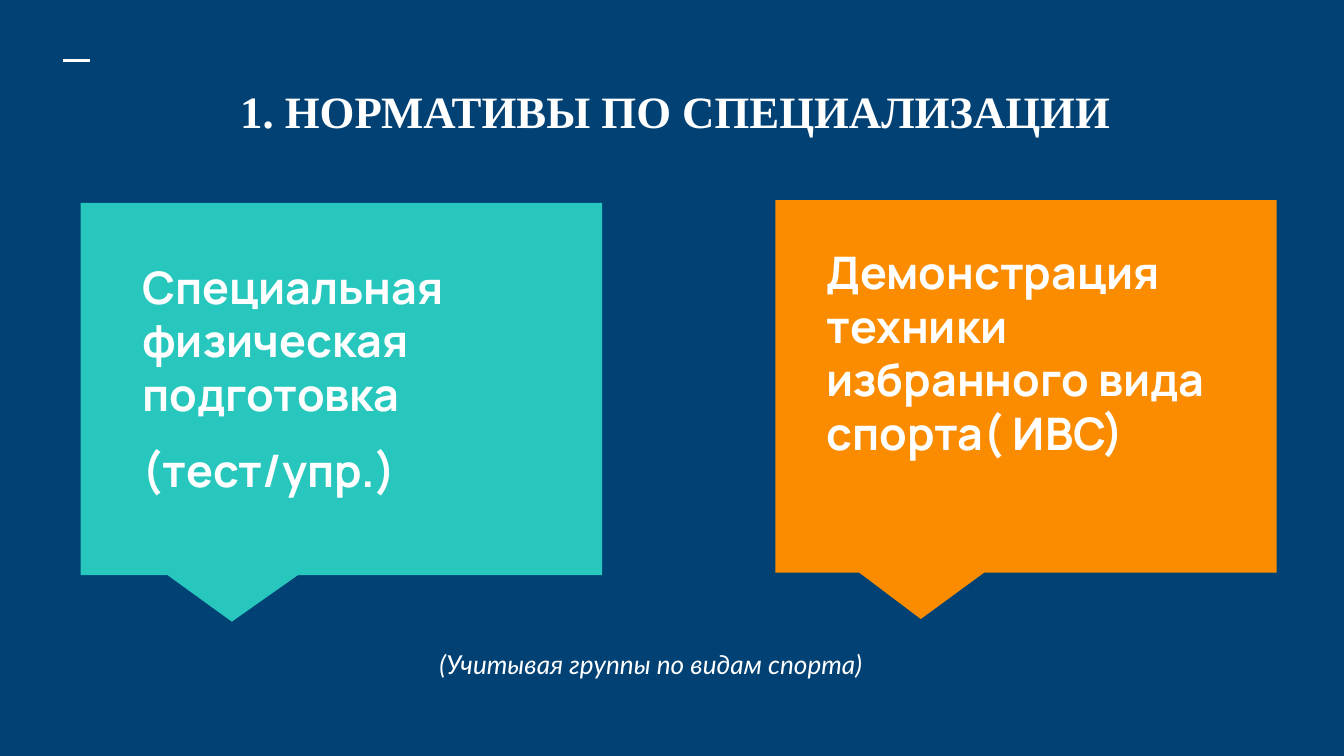
from pptx import Presentation
from pptx.dml.color import RGBColor
from pptx.enum import shapes, text
from pptx.oxml.ns import qn
from pptx.util import Inches, Pt
from lxml import etree

WHITE = "FFFFFF"
TOPIC_FONT = {"name": "Manrope", "size": Pt(24), "bold": True}
CALLOUTS = [
    {"box": (0.6, 1.51, 3.88, 2.77), "fill": "27C7BD", "text_box": (0.36, 0.32, 3.17, 2.29),
     "lines": ["Специальная физическая подготовка", "(тест/упр.)"]},
    {"box": (5.77, 1.49, 3.73, 2.77), "fill": "FB8C00", "text_box": (0.28, 0.23, 3.18, 2.49),
     "lines": ["Демонстрация техники избранного вида спорта( ИВС)"]},
]


def color(hex_code):
    return RGBColor.from_string(hex_code)


def add_text(slide, box, lines, font, align=text.PP_ALIGN.LEFT, anchor=text.MSO_ANCHOR.TOP):
    frame = slide.shapes.add_textbox(*map(Inches, box)).text_frame
    frame_format = {"word_wrap": True, "vertical_anchor": anchor}
    frame_format.update({f"margin_{side}": Inches(0.1) for side in ("left", "right", "top", "bottom")})
    for name, value in frame_format.items():
        setattr(frame, name, value)
    for index, line in enumerate(lines):
        paragraph = frame.add_paragraph() if index else frame.paragraphs[0]
        paragraph.alignment = align
        if index:
            paragraph.space_before = Pt(12)
        run = paragraph.add_run()
        run.text = line
        for name, value in font.items():
            setattr(run.font, name, value)
        run.font.color.rgb = color(WHITE)


def add_header(slide, box):
    left, top = box[:2]
    dash_left, dash_y = left + 0.16, top - 0.06
    dash = slide.shapes.add_connector(
        shapes.MSO_CONNECTOR.STRAIGHT,
        *map(Inches, (dash_left, dash_y, dash_left + 0.2, dash_y)))
    dash.line.color.rgb = color(WHITE)
    dash.line.width = Pt(1.5)
    etree.SubElement(dash.element.spPr, qn("a:effectLst"))
    add_text(slide, box, ["1. НОРМАТИВЫ ПО СПЕЦИАЛИЗАЦИИ"],
             {"name": "Times New Roman", "size": Pt(24), "bold": True},
             text.PP_ALIGN.CENTER, text.MSO_ANCHOR.MIDDLE)


def add_callout(slide, box, fill, text_box, lines):
    """Place a callout; text_box is offset from the callout's corner."""
    callout = slide.shapes.add_shape(
        shapes.MSO_SHAPE.RECTANGULAR_CALLOUT, *map(Inches, box))
    callout.adjustments[0], callout.adjustments[1] = -0.21, 0.625
    callout.shadow.inherit = False
    callout.fill.solid()
    callout.fill.fore_color.rgb = color(fill)
    callout.line.fill.background()
    dx, dy, width, height = text_box
    add_text(slide, (box[0] + dx, box[1] + dy, width, height), lines, TOPIC_FONT)


def add_footnote(slide, box):
    add_text(slide, box, ["(Учитывая группы по видам спорта)"],
             {"name": "Lato", "size": Pt(14), "italic": True},
             text.PP_ALIGN.CENTER, text.MSO_ANCHOR.MIDDLE)


def main():
    deck = Presentation()
    deck.slide_width = Inches(10)
    deck.slide_height = deck.slide_width * 9 // 16
    slide = deck.slides.add_slide(deck.slide_layouts[6])
    slide.background.fill.solid()
    slide.background.fill.fore_color.rgb = color("014174")
    add_header(slide, (0.31, 0.51, 9.43, 0.63))
    for callout in CALLOUTS:
        add_callout(slide, **callout)
    add_footnote(slide, (1.43, 4.8, 6.83, 0.28))
    deck.save("out.pptx")


if __name__ == "__main__":
    main()
